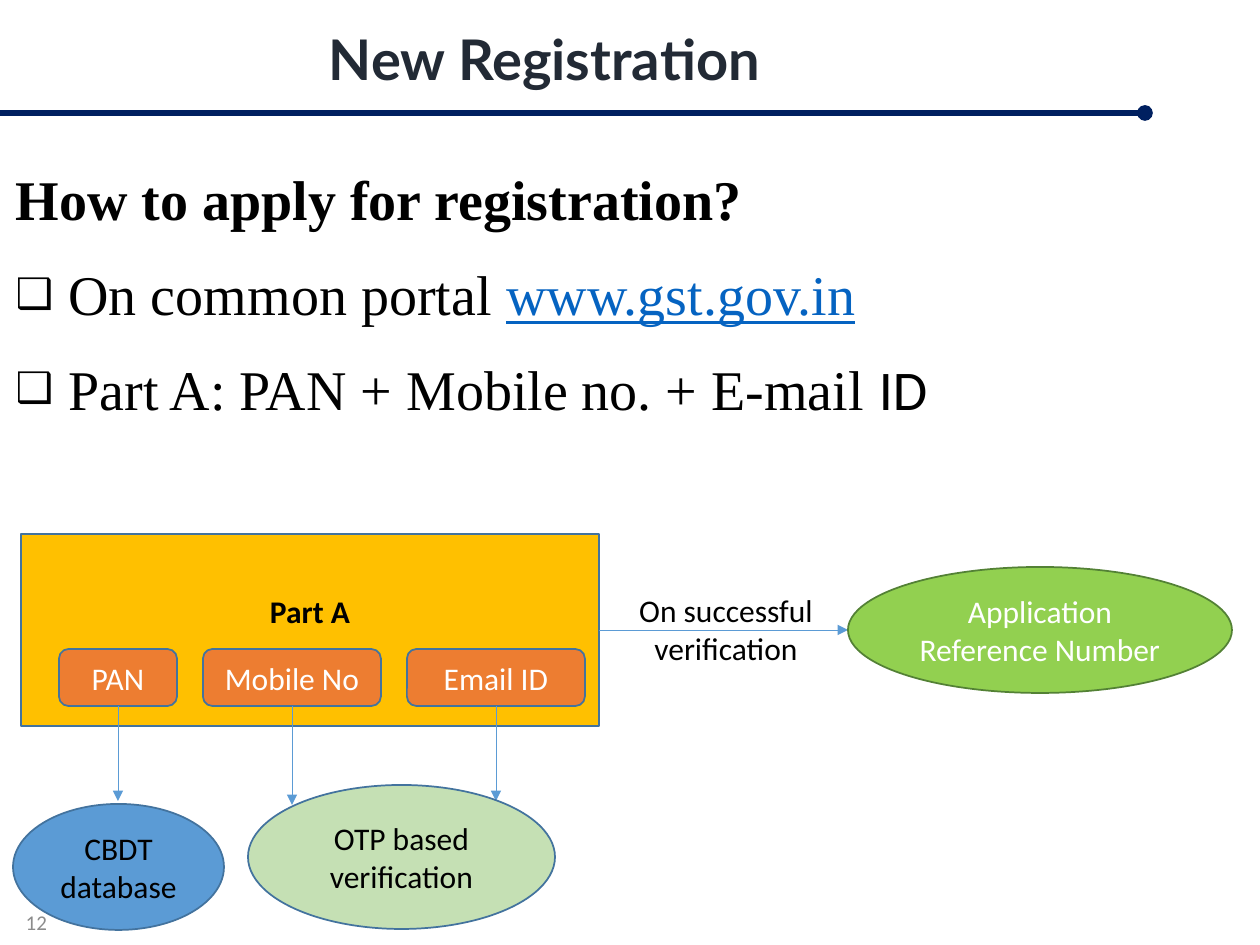
from lxml.etree import SubElement
from pptx import Presentation
from pptx.dml.color import RGBColor
from pptx.enum.shapes import MSO_CONNECTOR as Link, MSO_SHAPE as Kind
from pptx.enum.text import MSO_ANCHOR as Anchor, MSO_AUTO_SIZE as Fit, PP_ALIGN as Align
from pptx.oxml.ns import qn
from pptx.util import Emu, Pt

SCALE = 914400 // 126  # EMU in one px

BLACK = RGBColor(0x00, 0x00, 0x00)
WHITE = RGBColor(0xFF, 0xFF, 0xFF)
NAVY = RGBColor(0x00, 0x20, 0x60)
SLATE = RGBColor(0x22, 0x2A, 0x35)
GRAY = RGBColor(0x8C, 0x8C, 0x8C)
LINK = RGBColor(0x05, 0x63, 0xC1)
BLUE = RGBColor(0x5B, 0x9B, 0xD5)
EDGE = RGBColor(0x43, 0x73, 0x9E)
GOLD = RGBColor(0xFF, 0xC0, 0x00)
ORANGE = RGBColor(0xED, 0x7D, 0x31)
PALE = RGBColor(0xC5, 0xE0, 0xB4)
GREEN = RGBColor(0x92, 0xD0, 0x50)
MOSS = RGBColor(0x53, 0x81, 0x35)


def px(n):
    return Emu(int(n * SCALE))


def place(shape, x, y, w, h):
    shape.left, shape.top, shape.width, shape.height = map(px, (x, y, w, h))


def style(para, size, color, name="Calibri", bold=False):
    font = para.font
    font.size, font.name, font.bold = Pt(size), name, bold
    font.color.rgb = color


def add_node(slide, kind, text, box, fill, color=BLACK, edge=EDGE, bold=False):
    node = slide.shapes.add_shape(kind, *map(px, box))
    node.shadow.inherit = False
    node.fill.solid()
    node.fill.fore_color.rgb = fill
    node.line.color.rgb = edge
    node.line.width = Pt(1)
    frame = node.text_frame
    frame.word_wrap = True
    frame.vertical_anchor = Anchor.MIDDLE
    para = frame.paragraphs[0]
    para.text = text
    para.alignment = Align.CENTER
    style(para, 18, color, bold=bold)
    return node


def add_line(slide, x1, y1, x2, y2, color=BLUE, width=0.5, tail="triangle"):
    line = slide.shapes.add_connector(Link.STRAIGHT, *map(px, (x1, y1, x2, y2)))
    line.line.color.rgb = color
    line.line.width = Pt(width)
    props = line._element.spPr
    SubElement(props.find(qn("a:ln")), qn("a:tailEnd"), type=tail)
    SubElement(props, qn("a:effectLst"))
    return line


def add_label(slide, box, lines, size, color, align):
    frame = slide.shapes.add_textbox(*map(px, box)).text_frame
    frame.word_wrap = True
    frame.margin_left = frame.margin_right = 0
    for i, text in enumerate(lines):
        para = frame.add_paragraph() if i else frame.paragraphs[0]
        para.text = text
        para.alignment = align
        style(para, size, color)


def set_bullet(para, indent):
    props = para._p.get_or_add_pPr()
    props.set("marL", str(px(indent)))
    props.set("indent", str(-px(indent)))
    SubElement(props, qn("a:buSzPct"), val="75000")
    SubElement(props, qn("a:buChar"), char="❑")


def fill_head(slide, x, y, w, h):
    """Title with the rule below it."""
    add_line(slide, 0, 113, 1145, 113, NAVY, 3, "oval")
    title = slide.shapes.title
    place(title, x, y, w, h)
    frame = title.text_frame
    frame.auto_size = Fit.NONE
    frame.vertical_anchor = Anchor.TOP
    para = frame.paragraphs[0]
    para.text = "New Registration"
    para.alignment = Align.CENTER
    style(para, 32, SLATE, "Lato", True)


def fill_body(slide, x, y, w, h):
    """Question and its two bulleted answers."""
    body = slide.placeholders[1]
    place(body, x, y, w, h)
    frame = body.text_frame
    frame.auto_size = Fit.NONE
    frame.vertical_anchor = Anchor.TOP
    rows = [["How to apply for registration?"],
            ["On common portal ", "www.gst.gov.in"],
            ["Part A: PAN + Mobile no. + E-mail ", "ID"]]
    for i, parts in enumerate(rows):
        para = frame.add_paragraph() if i else frame.paragraphs[0]
        para.alignment = Align.JUSTIFY
        para.line_spacing = 1.1
        para.space_before = Pt(6 if i else 0)
        para.space_after = Pt(6)
        if i:
            set_bullet(para, 53)
        else:
            props = para._p.get_or_add_pPr()
            props.set("marL", "0")
            props.set("indent", "0")
            SubElement(props, qn("a:buNone"))
        style(para, 32, BLACK, "Times New Roman", i == 0)
        for part in parts:
            para.add_run().text = part
    site = frame.paragraphs[1].runs[1].font
    site.color.rgb = LINK
    site.underline = True
    frame.paragraphs[2].runs[1].font.name = "Calibri"


def draw_flow(slide, x, y):
    """Part A, the checks below it and the number it leads to."""
    part = add_node(slide, Kind.RECTANGLE, "Part A", (x, y, 578, 192), GOLD, bold=True)
    part.text_frame.margin_bottom = px(44)

    # Inputs in a row, each with an arrow down
    left, gap = x + 38, 26
    for text, w, drop in (("PAN", 118, 95), ("Mobile No", 178, 99), ("Email ID", 178, 95)):
        field = add_node(slide, Kind.ROUNDED_RECTANGLE, text,
                         (left, y + 115, w, 57), ORANGE, WHITE)
        mid = left + w / 2
        arrow = add_line(slide, mid, y + 172, mid, y + 172 + drop)
        arrow.begin_connect(field, 2)
        left += w + gap

    # Checks
    add_node(slide, Kind.OVAL, "CBDT database", (x - 8, y + 270, 211, 126), BLUE)
    add_node(slide, Kind.OVAL, "OTP based verification", (x + 227, y + 251, 307, 144), PALE)

    # Result
    arrow = add_line(slide, x + 578, y + 96, x + 827, y + 96)
    arrow.begin_connect(part, 3)
    add_node(slide, Kind.OVAL, "Application Reference Number",
             (x + 827, y + 33, 384, 126), GREEN, WHITE, MOSS)
    add_label(slide, (x + 607, y + 51, 196, 89),
              ["On successful", "verification"], 18, BLACK, Align.CENTER)


def main():
    deck = Presentation()
    deck.slide_width, deck.slide_height = px(1260), px(945)
    slide = deck.slides.add_slide(deck.slide_layouts[1])
    fill_head(slide, 21, 18, 1047, 81)
    fill_body(slide, 3, 152, 1229, 278)
    add_label(slide, (6, 903, 41, 38), ["12"], 12, GRAY, Align.RIGHT)
    draw_flow(slide, 21, 534)
    deck.save("out.pptx")


if __name__ == "__main__":
    main()
